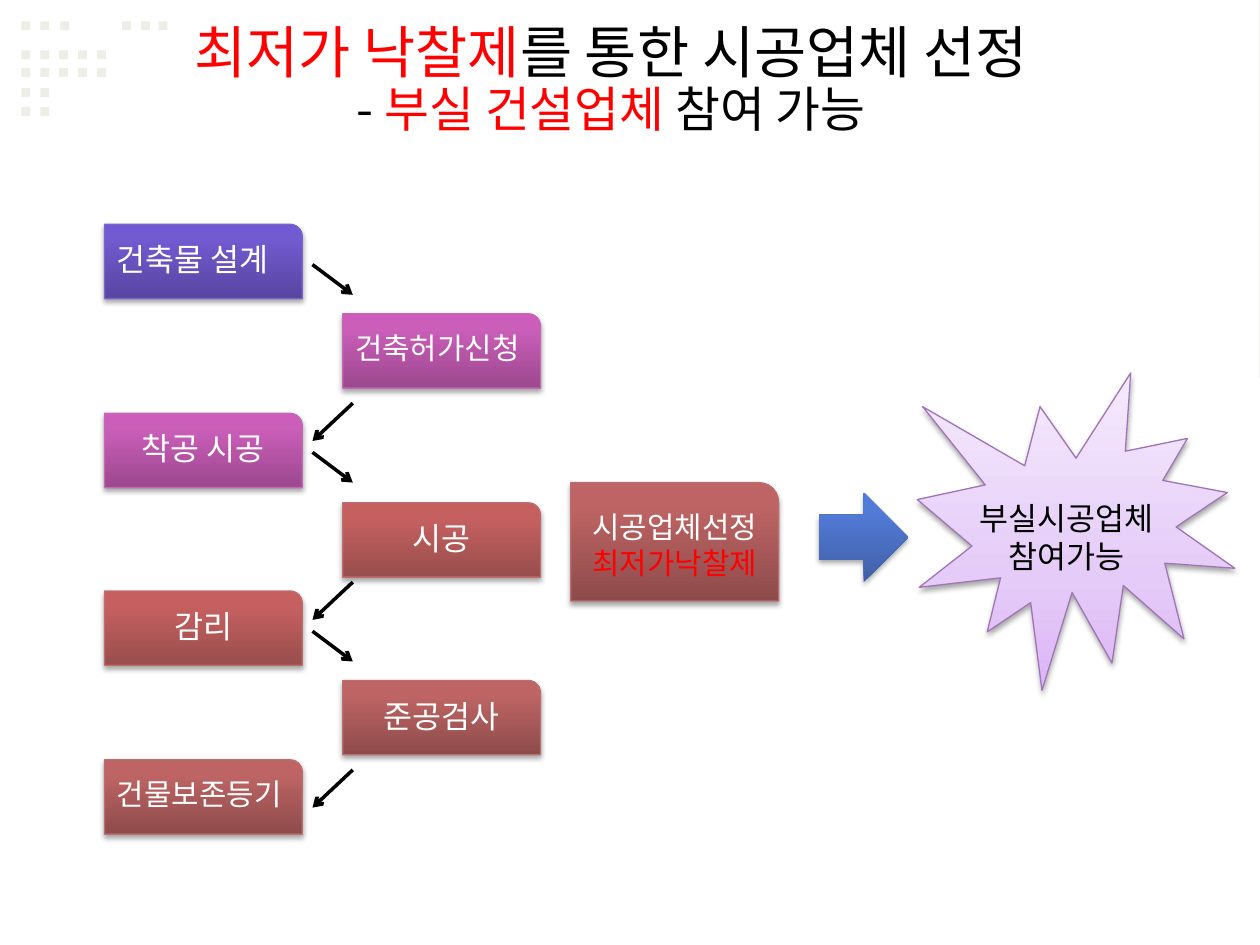
from dataclasses import dataclass

from lxml import etree
from pptx import Presentation
from pptx.dml.color import RGBColor
from pptx.enum import shapes as sh, text as tx
from pptx.oxml import parse_xml
from pptx.oxml.ns import nsdecls, qn
from pptx.util import Inches, Pt

FONT = "Noto Sans CJK KR"
HUES = {
    "dot": "EBEFE6", "leaf": "9CB084", "white": "FFFFFF",
    "black": "000000", "red": "FF0000",
}
# Gradient stops from bottom to top: (position, colour)
FADES = {
    "violet": [(0, "5845A1"), (80, "725AD0"), (100, "7158D4")],
    "pink": [(0, "9C488E"), (80, "CA5EB9"), (100, "CD5CBB")],
    "rose": [(0, "984E4D"), (80, "C66060"), (100, "C95E5E")],
    "brick": [(0, "8E4B4B"), (80, "BE6464"), (100, "C06363")],
    "blue": [(0, "405FA6"), (80, "527BD8"), (100, "507ADC")],
    "lilac": [(0, "DBB5F6"), (35, "E5CBF8"), (100, "F5EAFD")],
}
EDGES = {"violet": "7A66C7", "pink": "C269B3", "rose": "BE6C6C",
         "brick": "B96F6F", "lilac": "A075B8"}
BOX, STAR = sh.MSO_SHAPE.ROUND_1_RECTANGLE, sh.MSO_SHAPE.EXPLOSION1
LEFT, MID = tx.PP_ALIGN.LEFT, tx.PP_ALIGN.CENTER
COL_A, COL_B = 0.83, 2.72
WIDE, HIGH = 1.57, 0.59


@dataclass
class Step:
    name: str
    left: float
    top: float
    fade: str
    size: float = 18
    align: tx.PP_ALIGN = MID
    span: float = WIDE


STEPS = [
    Step("건축물 설계", COL_A, 1.78, "violet", align=LEFT),
    Step("건축허가신청", COL_B, 2.49, "pink", 17, LEFT, 1.73),
    Step("착공 시공", COL_A, 3.28, "pink"),
    Step("시공", COL_B, 3.99, "rose"),
    Step("감리", COL_A, 4.69, "rose"),
    Step("준공검사", COL_B, 5.4, "brick"),
    Step("건물보존등기", COL_A, 6.03, "brick", 17, LEFT, 1.65),
]
DOTS = {
    0.17: [0.17, 0.32, 0.48, 0.97, 1.12, 1.26],
    0.40: [0.17, 0.32, 0.47, 0.62, 0.77],
    0.54: [0.17, 0.32, 0.47, 0.62, 0.77],
    0.70: [0.17, 0.32],
    0.85: [0.17, 0.32],
}
CORNER = [
    (8.81, 0), (10, 0), (10, 2.91), (9.98, 2.52), (9.96, 2.17), (9.93, 1.85),
    (9.9, 1.57), (9.86, 1.32), (9.82, 1.1), (9.77, 0.9), (9.71, 0.73),
    (9.65, 0.58), (9.57, 0.45), (9.48, 0.34), (9.37, 0.25), (9.26, 0.17),
    (9.12, 0.11), (8.98, 0.05),
]
SWOOSH = [
    (8.92, 6.25), (8.92, 6.32), (8.67, 6.5), (8.35, 6.67), (7.95, 6.82),
    (7.5, 6.94), (7, 7.04), (6.46, 7.13), (5.89, 7.19), (5.31, 7.23),
    (4.72, 7.25), (4.14, 7.25), (3.57, 7.23), (3.04, 7.19), (2.55, 7.12),
    (2.1, 7.04), (1.72, 6.94), (1.42, 6.82), (1.42, 6.79), (1.73, 6.91),
    (2.12, 7), (2.57, 7.08), (3.07, 7.14), (3.61, 7.17), (4.17, 7.19),
    (4.76, 7.19), (5.34, 7.16), (5.93, 7.12), (6.49, 7.06), (7.03, 6.97),
    (7.53, 6.87), (7.98, 6.75), (8.37, 6.6), (8.68, 6.44),
]


def rgb(name: str) -> RGBColor:
    return RGBColor.from_string(HUES[name])


def fade(shape, stops: list, angle: int = 270) -> None:
    """Fill with a linear gradient; a third item in a stop is its opacity."""
    shape.fill.background()
    items = ""
    for pos, hue, *alpha in stops:
        clear = f'<a:alpha val="{alpha[0] * 1000}"/>' if alpha else ""
        items += (f'<a:gs pos="{pos * 1000}"><a:srgbClr val="{hue}">'
                  f'{clear}</a:srgbClr></a:gs>')
    grad = parse_xml(
        f'<a:gradFill {nsdecls("a")} rotWithShape="1"><a:gsLst>{items}</a:gsLst>'
        f'<a:lin ang="{angle * 60000}" scaled="0"/></a:gradFill>')
    props = shape.element.spPr
    props.replace(props.find(qn("a:noFill")), grad)


def shade(shape) -> None:
    """Drop a soft shadow straight down."""
    shape.shadow.inherit = False
    shape.element.spPr.find(qn("a:effectLst")).append(parse_xml(
        f'<a:outerShdw {nsdecls("a")} blurRad="{Pt(3.1)}" dist="{Pt(1.8)}" '
        'dir="5400000" rotWithShape="0"><a:srgbClr val="000000">'
        '<a:alpha val="35000"/></a:srgbClr></a:outerShdw>'))


def add_form(slide, kind, left: float, top: float, wide: float, high: float,
             tone: str) -> None:
    form = slide.shapes.add_shape(
        kind, Inches(left), Inches(top), Inches(wide), Inches(high))
    fade(form, FADES[tone])
    if tone in EDGES:
        form.line.color.rgb = RGBColor.from_string(EDGES[tone])
        form.line.width = Pt(0.75)
    else:
        form.line.fill.background()
    shade(form)


def add_run(para, words: str, size: float, hue: str) -> None:
    run = para.add_run()
    run.text = words
    run.font.size = Pt(size)
    run.font.color.rgb = rgb(hue)
    run.font.name = FONT
    etree.SubElement(run.font._element, qn("a:ea")).set("typeface", FONT)


def add_label(slide, left: float, top: float, wide: float, high: float,
              rows: list[tuple[str, str]], size: float, align=MID) -> None:
    """Write one paragraph for each (words, colour) row."""
    frame = slide.shapes.add_textbox(
        Inches(left), Inches(top), Inches(wide), Inches(high)).text_frame
    frame.word_wrap = True
    frame.auto_size = tx.MSO_AUTO_SIZE.SHAPE_TO_FIT_TEXT
    for i, (words, hue) in enumerate(rows):
        para = frame.add_paragraph() if i else frame.paragraphs[0]
        para.alignment = align
        add_run(para, words, size, hue)


def add_arrow(slide, x1: float, y1: float, x2: float, y2: float) -> None:
    line = slide.shapes.add_connector(
        sh.MSO_CONNECTOR.STRAIGHT, Inches(x1), Inches(y1), Inches(x2), Inches(y2))
    line.line.color.rgb = rgb("black")
    line.line.width = Pt(2)
    etree.SubElement(line.line._get_or_add_ln(), qn("a:tailEnd")).set("type", "arrow")
    etree.SubElement(line.element.spPr, qn("a:effectLst"))


def add_outline(slide, points: list):
    pen = slide.shapes.build_freeform(*points[0], scale=Inches(1))
    pen.add_line_segments(points[1:], close=True)
    form = pen.convert_to_shape()
    form.line.fill.background()
    form.shadow.inherit = False
    return form


def add_decor(slide) -> None:
    for top, lefts in DOTS.items():
        for left in lefts:
            dot = slide.shapes.add_shape(
                sh.MSO_SHAPE.RECTANGLE, Inches(left), Inches(top),
                Inches(0.07), Inches(0.07))
            dot.fill.solid()
            dot.fill.fore_color.rgb = rgb("dot")
            dot.line.fill.background()
            dot.shadow.inherit = False
    leaf = add_outline(slide, CORNER)
    leaf.fill.solid()
    leaf.fill.fore_color.rgb = rgb("leaf")
    ends = HUES["white"]
    fade(add_outline(slide, SWOOSH),
         [(0, ends, 30), (50, HUES["leaf"]), (100, ends, 30)], 0)


def set_title(slide) -> None:
    title = slide.shapes.title
    title.left, title.top = Inches(0.35), Inches(0.21)
    title.width, title.height = Inches(9), Inches(0.87)
    frame = title.text_frame
    frame.auto_size = tx.MSO_AUTO_SIZE.NONE
    frame.vertical_anchor = tx.MSO_ANCHOR.MIDDLE
    para = frame.paragraphs[0]
    para.alignment, para.line_spacing = MID, 0.9
    add_run(para, "최저가 낙찰제", 32.4, "red")
    add_run(para, "를 통한 시공업체 선정", 32.4, "black")
    para.add_line_break()
    add_run(para, "- ", 27.9, "black")
    add_run(para, "부실 건설업체 ", 27.9, "red")
    add_run(para, "참여 가능", 27.9, "black")


def main() -> None:
    deck = Presentation()
    deck.slide_width, deck.slide_height = Inches(10), Inches(7.5)
    slide = deck.slides.add_slide(deck.slide_layouts[5])
    add_decor(slide)
    set_title(slide)
    for step in STEPS:
        add_form(slide, BOX, step.left, step.top, WIDE, HIGH, step.fade)
        add_label(slide, step.left, step.top + 0.08, step.span, 0.4,
                  [(step.name, "white")], step.size, step.align)
    add_form(slide, BOX, 4.53, 3.83, 1.65, 0.94, "brick")
    add_label(slide, 4.53, 3.99, 1.65, 0.67,
              [("시공업체선정", "white"), ("최저가낙찰제", "red")], 17)
    add_form(slide, sh.MSO_SHAPE.RIGHT_ARROW, 6.5, 3.91, 0.71, 0.71, "blue")
    add_form(slide, STAR, 7.28, 2.96, 2.52, 2.52, "lilac")
    add_label(slide, 7.6, 3.91, 1.73, 0.71,
              [("부실시공업체", "black"), ("참여가능", "black")], 18)
    for top in (2.1, 3.59, 5.01):
        add_arrow(slide, 2.48, top, 2.8, top + 0.24)
    for top in (3.2, 4.62, 6.11):
        add_arrow(slide, 2.8, top, 2.48, top + 0.3)
    deck.save("out.pptx")


if __name__ == "__main__":
    main()
